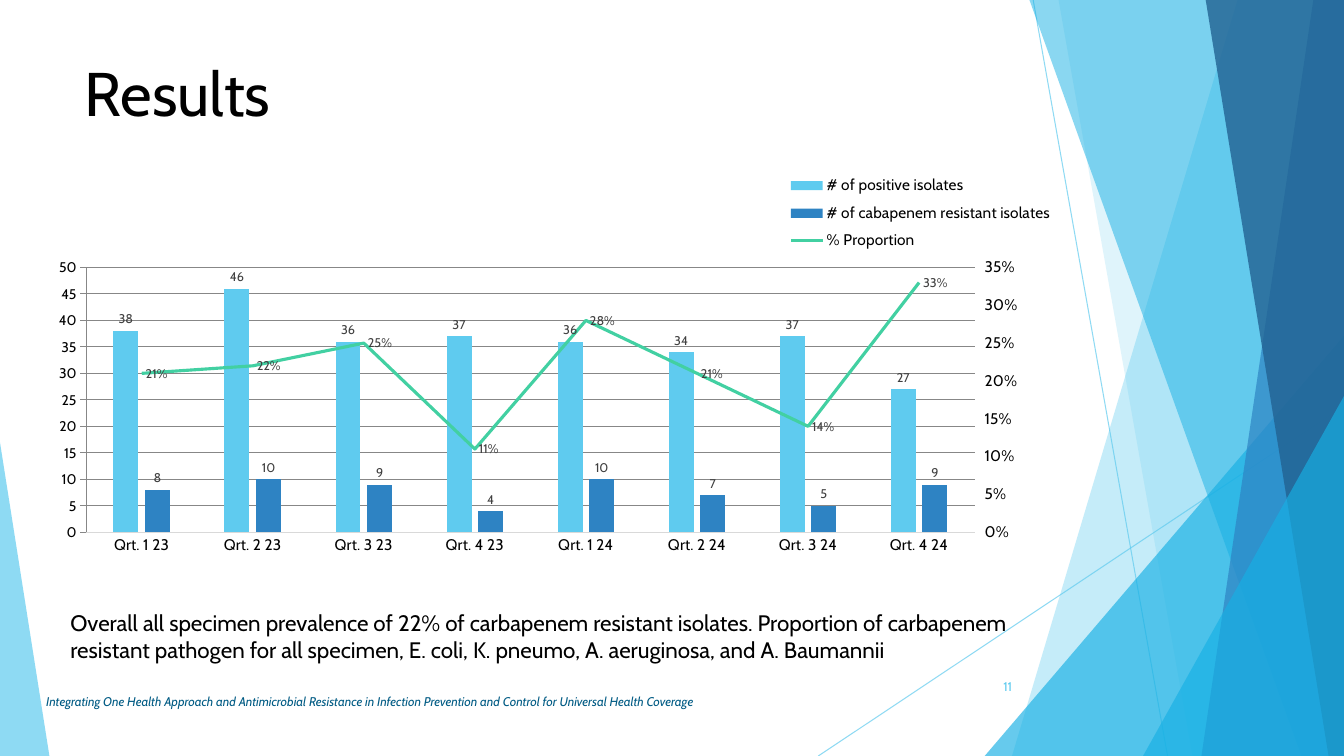
import copy

import pptx
import pptx.chart.axis
import pptx.chart.data
import pptx.dml.color
import pptx.enum.chart
import pptx.enum.shapes
import pptx.enum.text
import pptx.oxml
import pptx.oxml.ns
import pptx.util

Pt = pptx.util.Pt
RGBColor = pptx.dml.color.RGBColor
qn = pptx.oxml.ns.qn
Tick = pptx.enum.chart.XL_TICK_MARK
LabelPosition = pptx.enum.chart.XL_LABEL_POSITION
Anchor = pptx.enum.text.MSO_ANCHOR
Align = pptx.enum.text.PP_ALIGN

BLACK = RGBColor(0x00, 0x00, 0x00)
SKY = RGBColor(0x5F, 0xCB, 0xEF)
CYAN = RGBColor(0x17, 0xB0, 0xE4)
BLUE = RGBColor(0x2E, 0x83, 0xC3)
NAVY = RGBColor(0x22, 0x62, 0x92)
GREEN = RGBColor(0x42, 0xD0, 0xA2)
FOOTER = RGBColor(0x00, 0x5B, 0x84)
LABEL = RGBColor(0x40, 0x40, 0x40)
AXIS = RGBColor(0xD9, 0xD9, 0xD9)

WIDTH, HEIGHT = 960, 540
BAND_TOP = -0.7
FONT = "Cabin"
CHART_NS = "http://schemas.openxmlformats.org/drawingml/2006/chart"

RAYS = [((738, 0), (834, HEIGHT)), ((WIDTH, 290), (584.5, HEIGHT))]
# band: left edge at top and bottom; triangle: left, top, width, height, apex
FACETS = [
    ("band", (884.2, 722.9), SKY, 36),
    ("band", (756, 851.8), SKY, 20),
    ("triangle", (703.4, 239.8, 256.6, 300.2, 1), CYAN, 66),
    ("band", (735.1, 929.5), CYAN, 50),
    ("band", (938.2, 858.2), BLUE, 70),
    ("band", (861.1, 949), NAVY, 80),
    ("triangle", (816.5, 283, 143.5, 257, 1), CYAN, 66),
    ("triangle", (0, 316.1, 35.3, 223.9, 0), SKY, 70),
]

QUARTERS = [f"Qrt. {q} {year}" for year in (23, 24) for q in (1, 2, 3, 4)]
POSITIVE = (38, 46, 36, 37, 36, 34, 37, 27)
RESISTANT = (8, 10, 9, 4, 10, 7, 5, 9)
PROPORTION = (0.21, 0.22, 0.25, 0.11, 0.28, 0.21, 0.14, 0.33)


def set_attrs(obj, values):
    for name, value in values.items():
        setattr(obj, name, value)


def set_font(font, size, color, **extra):
    set_attrs(font, {"name": FONT, "size": Pt(size), **extra})
    font.color.rgb = color


def set_alpha(s, percent):
    for color in s._element.spPr.iter(qn("a:srgbClr")):
        color.append(color.makeelement(qn("a:alpha"), {"val": str(percent * 1000)}))


def add_ray(shapes, start, end):
    line = shapes.add_connector(
        pptx.enum.shapes.MSO_CONNECTOR.STRAIGHT, *map(Pt, start + end))
    line.line.color.rgb = SKY
    line.line.width = Pt(0.75)
    set_alpha(line, 70)
    sp_pr = line._element.spPr
    sp_pr.append(sp_pr.makeelement(qn("a:effectLst"), {}))


def add_band(shapes, top_x, bottom_x):
    """Four-sided band that reaches the right edge of the slide."""
    builder = shapes.build_freeform(Pt(top_x), Pt(BAND_TOP))
    corners = [(WIDTH, BAND_TOP), (WIDTH, HEIGHT), (bottom_x, HEIGHT)]
    builder.add_line_segments([(Pt(x), Pt(y)) for x, y in corners], close=True)
    return builder.convert_to_shape()


def add_triangle(shapes, left, top, width, height, apex):
    s = shapes.add_shape(pptx.enum.shapes.MSO_SHAPE.ISOSCELES_TRIANGLE,
                         *map(Pt, (left, top, width, height)))
    s.adjustments[0] = apex
    return s


def add_facet(shapes, kind, geometry, color, opacity):
    s = {"band": add_band, "triangle": add_triangle}[kind](shapes, *geometry)
    s.shadow.inherit = False
    s.fill.solid()
    s.fill.fore_color.rgb = color
    s.line.fill.background()
    set_alpha(s, opacity)


def set_text(s, text, size, color, anchor=Anchor.TOP, align=Align.LEFT, **extra):
    tf = s.text_frame
    set_attrs(tf, {"word_wrap": True, "vertical_anchor": anchor,
                   "auto_size": pptx.enum.text.MSO_AUTO_SIZE.NONE})
    p = tf.paragraphs[0]
    p.alignment = align
    r = p.add_run()
    r.text = text
    set_font(r.font, size, color, **extra)


def add_text(shapes, box, *args, **extra):
    set_text(shapes.add_textbox(*map(Pt, box)), *args, **extra)


def make_layout(x, y, w, h, inner=False):
    target = '<c:layoutTarget val="inner"/>' if inner else ""
    sizes = "".join(f'<c:{k} val="{v}"/>' for k, v in zip("xywh", (x, y, w, h)))
    return pptx.oxml.parse_xml(
        f'<c:layout xmlns:c="{CHART_NS}"><c:manualLayout>{target}'
        f'<c:xMode val="edge"/><c:yMode val="edge"/>{sizes}'
        '</c:manualLayout></c:layout>')


def remove_children(parent, tag):
    for child in parent.findall(qn(tag)):
        parent.remove(child)


def move_to_right_axis(chart, position):
    """Turn one column series into a line on a second axis; return that axis."""
    bars = chart.plots[0]._element
    ser = chart.plots[0].series[position]._element
    remove_children(ser, "c:invertIfNegative")
    line_plot = pptx.oxml.parse_xml(
        f'<c:lineChart xmlns:c="{CHART_NS}"><c:grouping val="standard"/>'
        '<c:varyColors val="0"/><c:marker val="1"/>'
        '<c:axId val="501"/><c:axId val="502"/></c:lineChart>')
    line_plot.insert(2, ser)
    bars.addnext(line_plot)
    cat_ax = copy.deepcopy(chart.category_axis._element)
    val_ax = copy.deepcopy(chart.value_axis._element)
    for ax, own, other in ((cat_ax, "501", "502"), (val_ax, "502", "501")):
        ax.find(qn("c:axId")).set("val", own)
        ax.find(qn("c:crossAx")).set("val", other)
    chart.value_axis._element.addnext(val_ax)
    val_ax.addnext(cat_ax)
    val_ax.find(qn("c:axPos")).set("val", "r")
    val_ax.find(qn("c:crosses")).set("val", "max")
    pptx.chart.axis.CategoryAxis(cat_ax).visible = False
    return pptx.chart.axis.ValueAxis(val_ax)


def format_value_axis(axis, top, step, number_format, tick):
    set_attrs(axis, {"minimum_scale": 0, "maximum_scale": top, "major_unit": step,
                     "has_major_gridlines": False, "major_tick_mark": tick,
                     "minor_tick_mark": Tick.NONE})
    set_attrs(axis.tick_labels, {"number_format": number_format,
                                 "number_format_is_linked": False})
    set_font(axis.tick_labels.font, 11, BLACK)
    axis.format.line.fill.background()


def label_series(series, position, number_format):
    labels = series.data_labels
    set_attrs(labels, {"show_value": True, "position": position,
                       "number_format": number_format,
                       "number_format_is_linked": False})
    set_font(labels.font, 9, LABEL)


def add_isolate_chart(shapes):
    data = pptx.chart.data.CategoryChartData()
    data.categories = QUARTERS
    data.add_series("# of positive isolates", POSITIVE)
    data.add_series("# of cabapenem resistant isolates", RESISTANT)
    data.add_series("% Proportion", PROPORTION, number_format="0%")
    chart = shapes.add_chart(
        pptx.enum.chart.XL_CHART_TYPE.COLUMN_CLUSTERED,
        *map(Pt, (17.3, 107.3, 738, 310.3)), data).chart
    set_font(chart.font, 10, BLACK)
    set_attrs(chart, {"has_title": False, "has_legend": True})

    right_axis = move_to_right_axis(chart, 2)
    format_value_axis(chart.value_axis, 50, 5, "General", Tick.NONE)
    format_value_axis(right_axis, 0.35, 0.05, "0%", Tick.OUTSIDE)
    axis = chart.category_axis
    set_attrs(axis, {"major_tick_mark": Tick.NONE, "minor_tick_mark": Tick.NONE})
    set_font(axis.tick_labels.font, 11, BLACK)
    axis.format.line.color.rgb = AXIS
    axis.format.line.width = Pt(0.75)

    bars, lines = chart.plots
    set_attrs(bars, {"gap_width": 219, "overlap": -27, "vary_by_categories": False})
    for series, color in zip(bars.series, (SKY, BLUE)):
        series.format.fill.solid()
        series.format.fill.fore_color.rgb = color
        label_series(series, LabelPosition.OUTSIDE_END, "General")
    proportion = lines.series[0]
    proportion.smooth = False
    proportion.marker.style = pptx.enum.chart.XL_MARKER_STYLE.NONE
    proportion.format.line.color.rgb = GREEN
    proportion.format.line.width = Pt(2.25)
    label_series(proportion, LabelPosition.RIGHT, "0%")

    legend = chart.legend
    set_attrs(legend, {"position": pptx.enum.chart.XL_LEGEND_POSITION.BOTTOM,
                       "include_in_layout": False})
    set_font(legend.font, 11, BLACK)
    remove_children(legend._element, "c:layout")
    legend._element.get_or_add_legendPos().addnext(make_layout(0.74, 0.04, 0.26, 0.21))
    plot_area = bars._element.getparent()
    remove_children(plot_area, "c:layout")
    plot_area.insert(0, make_layout(0.06, 0.27, 0.86, 0.61, inner=True))


def main():
    prs = pptx.Presentation()
    set_attrs(prs, {"slide_width": Pt(WIDTH), "slide_height": Pt(HEIGHT)})
    shapes = prs.slides.add_slide(prs.slide_layouts[5]).shapes
    for start, end in RAYS:
        add_ray(shapes, start, end)
    for facet in FACETS:
        add_facet(shapes, *facet)

    title = shapes.title
    set_attrs(title, dict(zip(("left", "top", "width", "height"),
                              map(Pt, (53.3, 35.3, 676.8, 103.7)))))
    set_text(title, "Results", 44, BLACK)
    add_isolate_chart(shapes)
    add_text(shapes, (43.2, 431.3, 686.9, 65.5),
             "Overall all specimen prevalence of 22% of carbapenem resistant isolates. "
             "Proportion of carbapenem resistant pathogen for all specimen, E. coli, "
             "K. pneumo, A. aeruginosa, and A. Baumannii", 16, BLACK)
    add_text(shapes, (25.9, 486.7, 685.4, 28.8),
             "Integrating One Health Approach and Antimicrobial Resistance in Infection "
             "Prevention and Control for Universal Health Coverage",
             9, FOOTER, Anchor.MIDDLE, italic=True)
    add_text(shapes, (676.1, 475.9, 54, 28.8), "11", 9, SKY, Anchor.MIDDLE, Align.RIGHT)
    prs.save("out.pptx")


if __name__ == "__main__":
    main()
